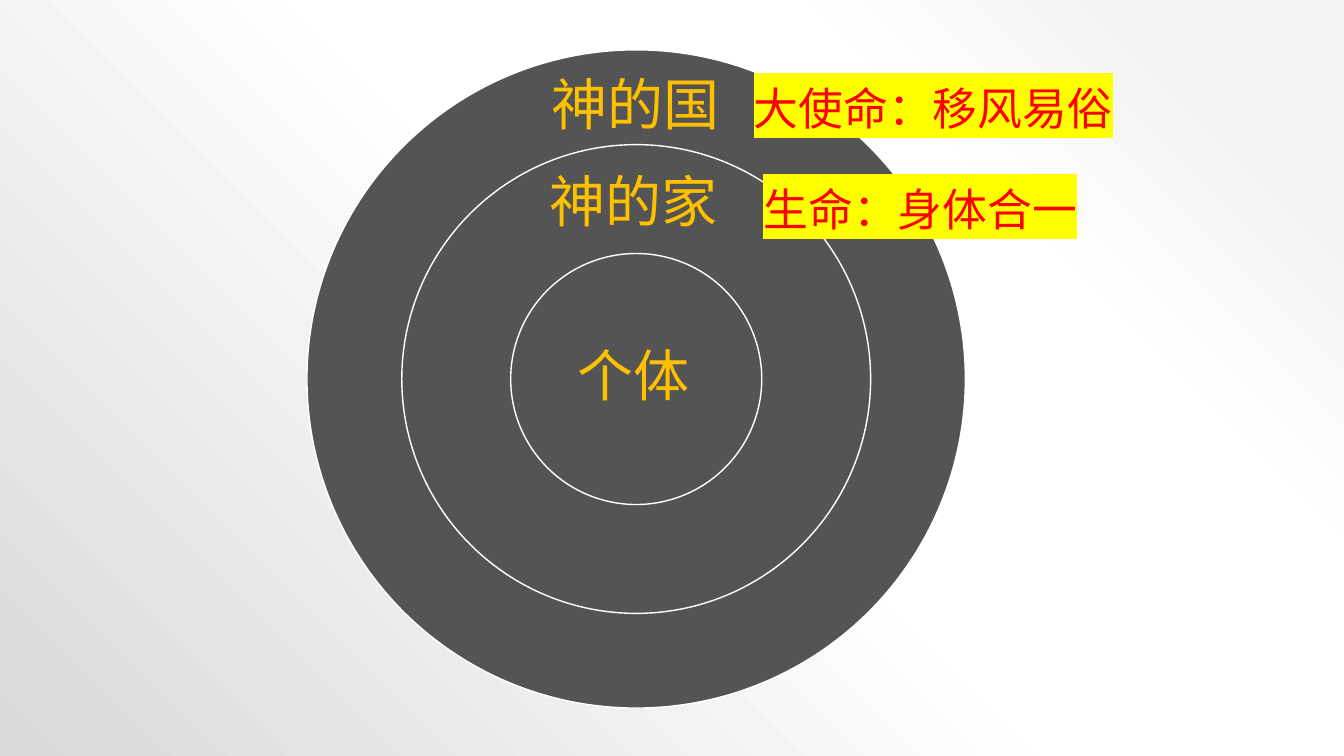
from dataclasses import dataclass

from lxml import etree
from pptx import Presentation
from pptx.dml.color import RGBColor
from pptx.enum import shapes, text
from pptx.oxml.ns import qn
from pptx.util import Inches, Pt


@dataclass(frozen=True)
class Theme:
    font: str = "Quicksand"
    disc: str = "545454"
    ring: str = "FFFFFF"
    label: str = "FFC000"
    mission: str = "FF0000"
    marker: str = "FFFF00"
    label_size: int = 40
    mission_size: int = 32
    backdrop: tuple = ((10, "F2F2F2"), (28, "FFFFFF"), (48, "FFFFFF"), (100, "D9D9D9"))


theme = Theme()


def add_text(slide, words, frame, size, color):
    """Add a one-line text box and return its paragraph and run."""
    box = slide.shapes.add_textbox(*(Inches(length) for length in frame))
    box.text_frame.word_wrap = True
    box.text_frame.auto_size = text.MSO_AUTO_SIZE.SHAPE_TO_FIT_TEXT
    para = box.text_frame.paragraphs[0]
    span = para.add_run()
    span.text = words
    span.font.name = theme.font
    span.font.size = Pt(size)
    span.font.color.rgb = RGBColor.from_string(color)
    return box, para, span


def add_color(parent, tag, color, **attributes):
    """Add an XML element that holds one RGB colour."""
    element = etree.SubElement(parent, qn(tag), **attributes)
    etree.SubElement(element, qn("a:srgbClr"), val=color)
    return element


deck = Presentation()
deck.slide_width, deck.slide_height = Inches(13.33), Inches(7.5)
page = deck.slides.add_slide(deck.slide_layouts[6])

# Radial backdrop spreading from the top right corner
page.background.fill.gradient()
gradient = next(page.element.iter(qn("a:gradFill")))
for child in list(gradient):
    gradient.remove(child)
stops = etree.SubElement(gradient, qn("a:gsLst"))
for percent, color in theme.backdrop:
    add_color(stops, "a:gs", color, pos=str(percent * 1000))
spread = etree.SubElement(gradient, qn("a:path"), path="circle")
etree.SubElement(spread, qn("a:fillToRect"), l="100000", b="100000")

# Concentric circles, largest at the back
center_x, center_y = 6.31, 3.76
for diameter in (6.53, 4.65, 2.49):
    circle = page.shapes.add_shape(
        shapes.MSO_SHAPE.OVAL,
        Inches(center_x - diameter / 2), Inches(center_y - diameter / 2),
        Inches(diameter), Inches(diameter))
    circle.shadow.inherit = False
    circle.fill.solid()
    circle.fill.fore_color.rgb = RGBColor.from_string(theme.disc)
    circle.line.color.rgb = RGBColor.from_string(theme.ring)
    circle.line.width = Pt(1)

# Name of each circle
for words, left, top, width in (
        ("神的国", 5.37, 0.72, 2.2),
        ("神的家", 5.35, 1.68, 2.2),
        ("个体", 5.63, 3.4, 1.69)):
    box, para, span = add_text(
        page, words, (left, top, width, 0.71), theme.label_size, theme.label)
    para.line_spacing = 0.9

# Highlighted missions
for words, left, top, width in (
        ("生命：身体合一", 7.46, 1.75, 3.34),
        ("大使命：移风易俗", 7.36, 0.75, 3.79)):
    box, para, span = add_text(
        page, words, (left, top, width, 0.64), theme.mission_size, theme.mission)
    box.text_frame.word_wrap = False
    para.alignment = text.PP_ALIGN.CENTER
    properties = span.font._element
    marker = add_color(properties, "a:highlight", theme.marker)
    properties.find(qn("a:latin")).addprevious(marker)

deck.save("out.pptx")
